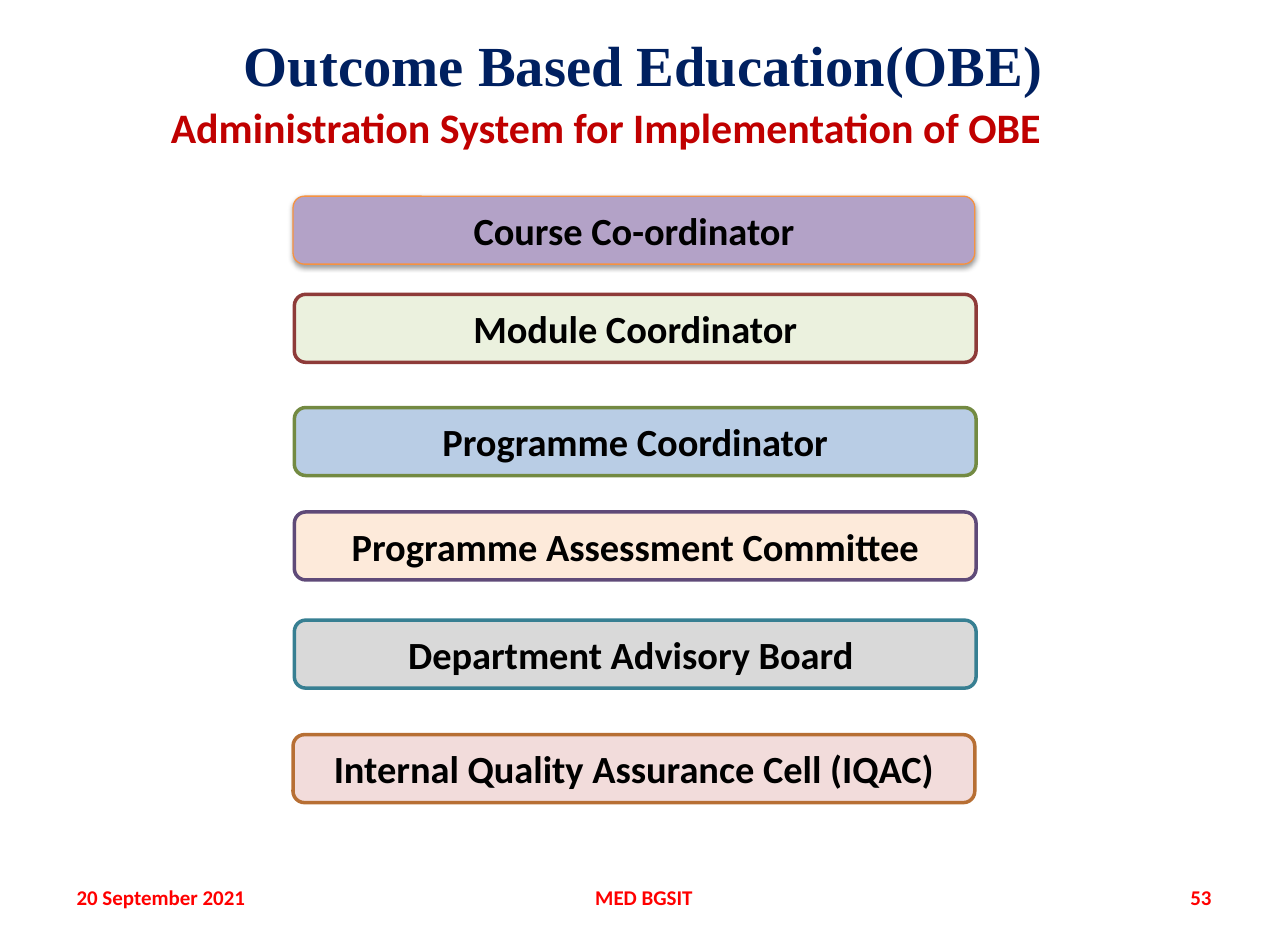
"""Build the slide on the administration system for Outcome Based Education."""
from dataclasses import dataclass

from lxml import etree
from pptx import Presentation
from pptx.dml.color import RGBColor
from pptx.enum.shapes import MSO_SHAPE
from pptx.enum.text import MSO_ANCHOR, PP_ALIGN
from pptx.oxml.ns import qn
from pptx.util import Inches, Pt

ROUNDED = MSO_SHAPE.FLOWCHART_ALTERNATE_PROCESS
MIDDLE, TOP = MSO_ANCHOR.MIDDLE, MSO_ANCHOR.TOP
LEFT, CENTER, RIGHT = PP_ALIGN.LEFT, PP_ALIGN.CENTER, PP_ALIGN.RIGHT


@dataclass(frozen=True)
class Theme:
    """Hold the fonts, colours and type sizes of the slide."""
    title_font: str = "Times New Roman"
    body_font: str = "Calibri"
    title: str = "002060"
    subtitle: str = "C00000"
    footer: str = "FF0000"
    role: str = "000000"
    shadow: str = "000000"
    title_size: float = 32.4
    subtitle_size: float = 24
    role_size: float = 22
    footer_size: float = 12


theme = Theme()


def write(shape, text, font, size, color, align, anchor=MIDDLE):
    """Put one bold paragraph into a shape."""
    frame = shape.text_frame
    frame.word_wrap = True
    frame.vertical_anchor = anchor
    paragraph = frame.paragraphs[0]
    paragraph.text = text
    paragraph.alignment = align
    paragraph.font.name = font
    paragraph.font.size = Pt(size)
    paragraph.font.bold = True
    paragraph.font.color.rgb = RGBColor.from_string(color)


def add_shadow(shape, color):
    """Give a shape a soft shadow straight below it."""
    effects = shape._element.spPr.find(qn("a:effectLst"))
    shadow = etree.SubElement(effects, qn("a:outerShdw"), blurRad=str(Pt(3.1)),
                              dist=str(Pt(1.6)), dir="5400000", rotWithShape="0")
    tint = etree.SubElement(shadow, qn("a:srgbClr"), val=color)
    etree.SubElement(tint, qn("a:alpha"), val="38000")


presentation = Presentation()
presentation.slide_width = Inches(10.24)
presentation.slide_height = Inches(7.48)
slide = presentation.slides.add_slide(presentation.slide_layouts[6])

title = slide.shapes.add_textbox(Inches(0.51), Inches(0.24), Inches(9.21), Inches(0.53))
write(title, "Outcome Based Education(OBE)", theme.title_font,
      theme.title_size, theme.title, CENTER)

subtitle = slide.shapes.add_textbox(Inches(1.26), Inches(0.76), Inches(7.19), Inches(0.5))
write(subtitle, "Administration System for Implementation of OBE", theme.body_font,
      theme.subtitle_size, theme.subtitle, LEFT, TOP)

roles = [
    ("Course Co-ordinator", 2.33, 1.56, "B3A2C7", "F69240", 0.75),
    ("Module Coordinator", 2.34, 2.34, "EBF1DE", "8E3B39", 2),
    ("Programme Coordinator", 2.34, 3.24, "B9CDE5", "738A42", 2),
    ("Programme Assessment Committee", 2.34, 4.07, "FDEADA", "5F4A78", 2),
    ("Department Advisory Board ", 2.34, 4.93, "D9D9D9", "377F92", 2),
    ("Internal Quality Assurance Cell (IQAC)", 2.33, 5.84, "F2DCDB", "B76F34", 2),
]
role_boxes = []
for text, left, top, fill, outline, width in roles:
    box = slide.shapes.add_shape(ROUNDED, Inches(left), Inches(top), Inches(5.42), Inches(0.54))
    box.shadow.inherit = False
    box.fill.solid()
    box.fill.fore_color.rgb = RGBColor.from_string(fill)
    box.line.color.rgb = RGBColor.from_string(outline)
    box.line.width = Pt(width)
    write(box, text, theme.body_font, theme.role_size, theme.role, CENTER)
    role_boxes.append(box)
add_shadow(role_boxes[0], theme.shadow)

footers = [
    ("20 September 2021", 0.51, 2.39, LEFT),
    ("MED BGSIT", 3.5, 3.24, CENTER),
    ("53", 7.34, 2.39, RIGHT),
]
for text, left, width, align in footers:
    footer = slide.shapes.add_textbox(Inches(left), Inches(6.93), Inches(width), Inches(0.4))
    write(footer, text, theme.body_font, theme.footer_size, theme.footer, align)

presentation.save("out.pptx")
